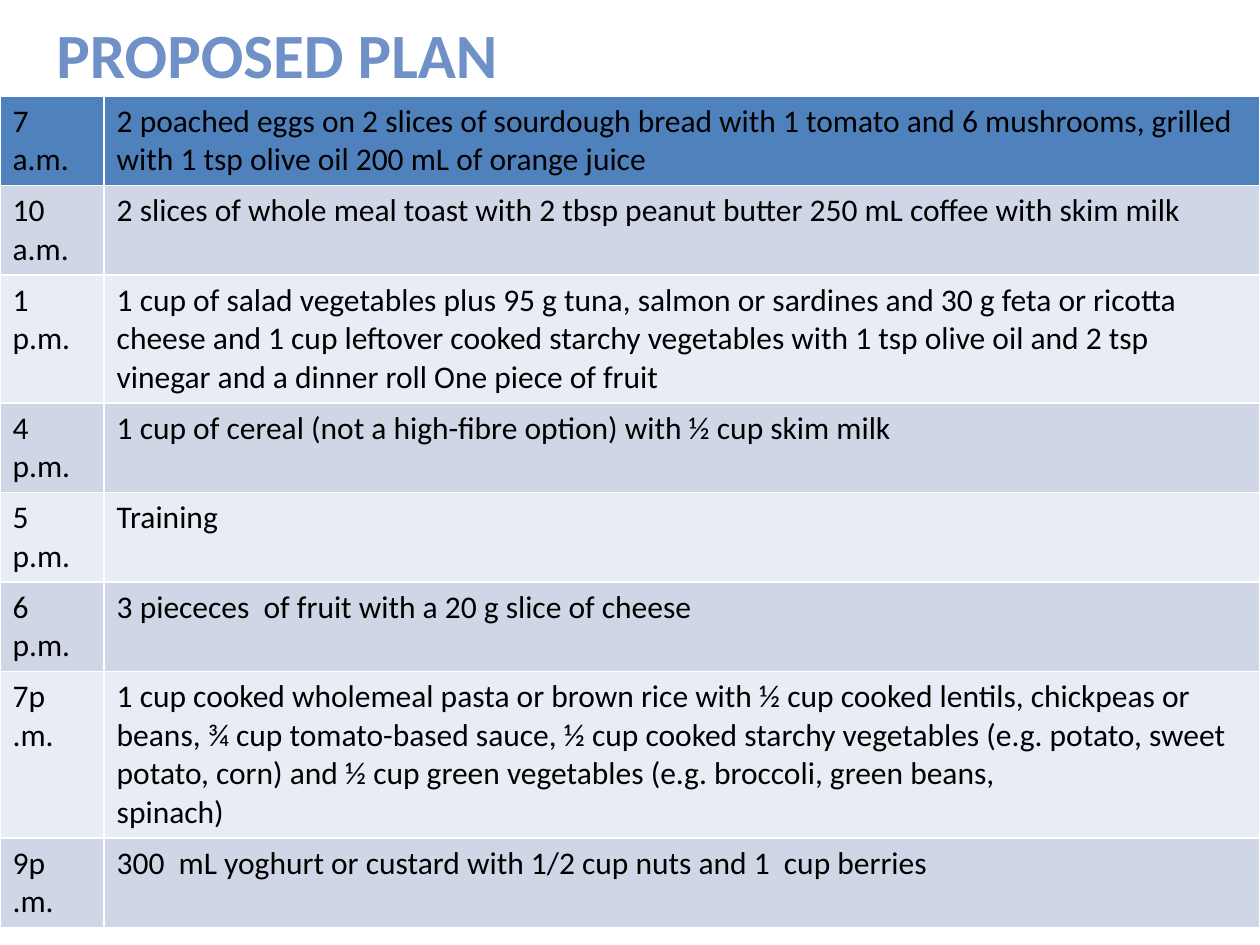
"""Build the proposed meal plan slide."""
from pptx import Presentation
from pptx.dml.color import RGBColor
from pptx.enum.text import MSO_ANCHOR, PP_ALIGN
from pptx.util import Pt

FONT = "Calibri"
INK = {
    "title": "6F91C8",
    "text": "000000",
    "head": "4F81BD",
    "dark": "CFD7E7",
    "light": "E8ECF4",
}
MEALS = [
    (["7 a.m."],
     ["2 poached eggs on 2 slices of sourdough bread with 1 tomato and 6 "
      "mushrooms, grilled with 1 tsp olive oil 200 mL of orange juice"]),
    (["10", "a.m."],
     ["2 slices of whole meal toast with 2 tbsp peanut butter 250 mL coffee "
      "with skim milk"]),
    (["1 p.m."],
     ["1 cup of salad vegetables plus 95 g tuna, salmon or sardines and 30 g "
      "feta or ricotta cheese and 1 cup leftover cooked starchy vegetables "
      "with 1 tsp olive oil and 2 tsp vinegar and a dinner roll One piece of "
      "fruit"]),
    (["4 p.m."],
     ["1 cup of cereal (not a high-fibre option) with ½ cup skim milk"]),
    (["5 p.m."], ["Training"]),
    (["6 p.m."], ["3 piececes  of fruit with a 20 g slice of cheese"]),
    (["7p", ".m."],
     ["1 cup cooked wholemeal pasta or brown rice with ½ cup cooked lentils, "
      "chickpeas or beans, ¾ cup tomato-based sauce, ½ cup cooked starchy "
      "vegetables (e.g. potato, sweet potato, corn) and ½ cup green "
      "vegetables (e.g. broccoli, green beans,",
      "spinach)"]),
    (["9p", ".m."],
     ["300  mL yoghurt or custard with 1/2 cup nuts and 1  cup berries"]),
]


def add_run(para, text, size, ink, bold=False):
    """Add one styled run to a paragraph."""
    run = para.add_run()
    run.text = text
    font = run.font
    font.name, font.size, font.bold = FONT, Pt(size), bold
    font.color.rgb = RGBColor.from_string(INK[ink])


def set_title(slide, text):
    """Place and fill the title."""
    title = slide.shapes.title
    title.left, title.top = Pt(25), Pt(0)
    title.width, title.height = Pt(590), Pt(60.5)
    frame = title.text_frame
    frame.vertical_anchor = MSO_ANCHOR.MIDDLE
    para = frame.paragraphs[0]
    para.alignment = PP_ALIGN.LEFT
    add_run(para, text, 36, "title", True)


def fill_cell(cell, lines, ink):
    """Colour a cell and write its lines."""
    cell.fill.solid()
    cell.fill.fore_color.rgb = RGBColor.from_string(INK[ink])
    frame = cell.text_frame
    for num, line in enumerate(lines):
        para = frame.add_paragraph() if num else frame.paragraphs[0]
        add_run(para, line, 18, "text")


def add_plan(slide, meals):
    """Add the table of times and meals."""
    high = 29.2
    table = slide.shapes.add_table(
        len(meals), 2, Pt(0), Pt(54.8), Pt(720), Pt(high * len(meals))).table
    for col, wide in zip(table.columns, (59.5, 660.5)):
        col.width = Pt(wide)
    for num, meal in enumerate(meals):
        table.rows[num].height = Pt(high)
        ink = ("light", "dark")[num % 2] if num else "head"
        for cell, lines in zip(table.rows[num].cells, meal):
            fill_cell(cell, lines, ink)


def main():
    """Build and save the slide."""
    deck = Presentation()
    deck.slide_width, deck.slide_height = Pt(720), Pt(540)
    slide = deck.slides.add_slide(deck.slide_layouts[5])
    set_title(slide, "PROPOSED PLAN")
    add_plan(slide, MEALS)
    deck.save("out.pptx")


if __name__ == "__main__":
    main()
